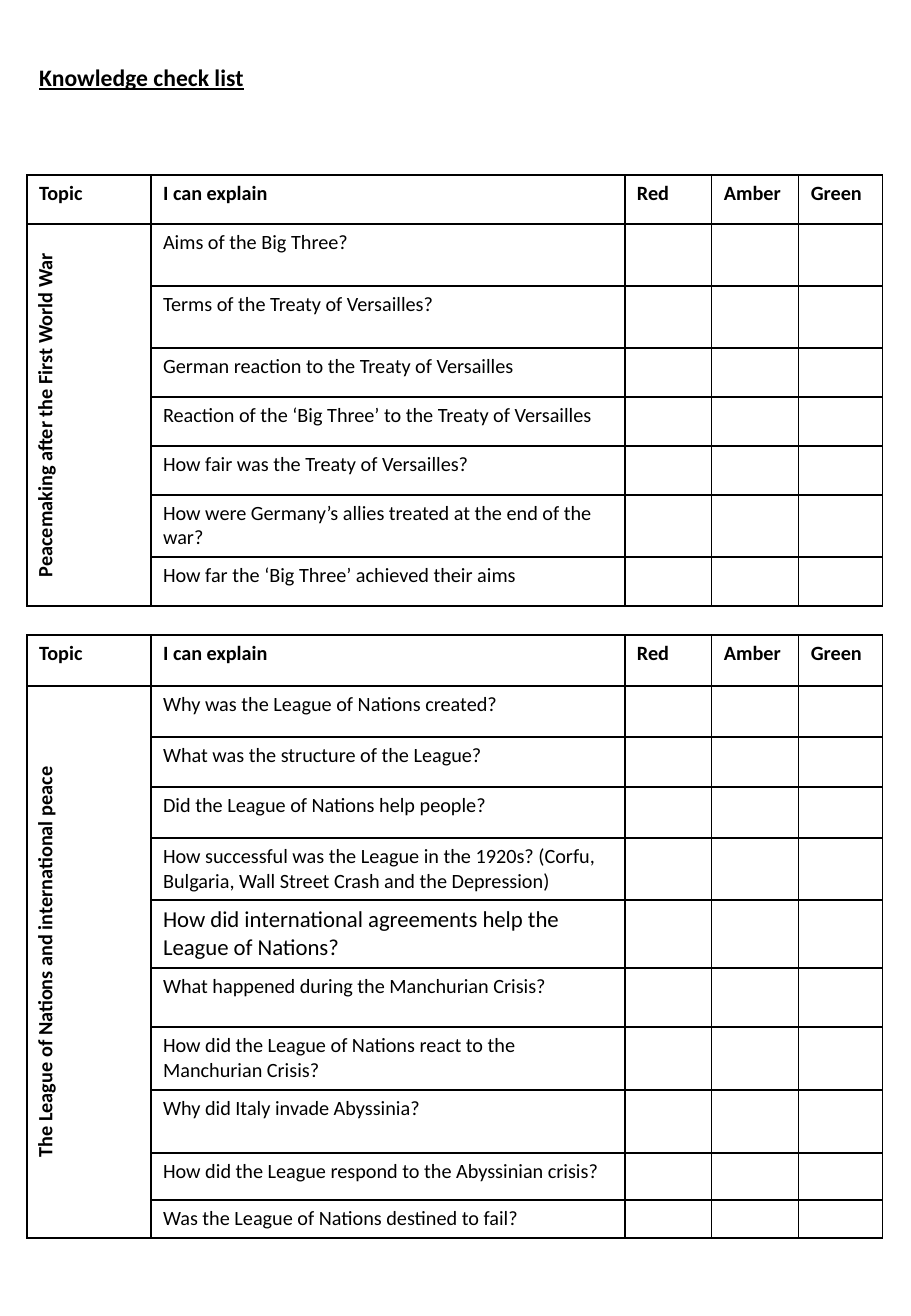
import pptx
import pptx.dml.color
import pptx.enum.text
import pptx.oxml
import pptx.oxml.ns
import pptx.util

PX = 914400 / 121.5
FONT = "Calibri"
COLORS = {"ink": "000000", "paper": "FFFFFF"}
HEADINGS = ["Topic", "I can explain", "Red", "Amber", "Green"]
COLUMNS = [124, 474, 87, 87, 84]
LARGE = {"How did international agreements help the League of Nations?": 13.5}

PEACEMAKING = [
    ("Aims of the Big Three?", 62),
    ("Terms of the Treaty of Versailles?", 62),
    ("German reaction to the Treaty of Versailles", 49),
    ("Reaction of the ‘Big Three’ to the Treaty of Versailles", 49),
    ("How fair was the Treaty of Versailles?", 49),
    ("How were Germany’s allies treated at the end of the war?", 62),
    ("How far the ‘Big Three’ achieved their aims", 49),
]
LEAGUE = [
    ("Why was the League of Nations created?", 51),
    ("What was the structure of the League?", 50),
    ("Did the League of Nations help people?", 51),
    ("How successful was the League in the 1920s? (Corfu, Bulgaria, "
     "Wall Street Crash and the Depression)", 62),
    ("How did international agreements help the League of Nations?", 68),
    ("What happened during the Manchurian Crisis?", 59),
    ("How did the League of Nations react to the Manchurian Crisis?", 63),
    ("Why did Italy invade Abyssinia?", 63),
    ("How did the League respond to the Abyssinian crisis?", 47),
    ("Was the League of Nations destined to fail?", 38),
]


def px(n):
    return pptx.util.Emu(round(n * PX))


def color(name):
    return pptx.dml.color.RGBColor.from_string(COLORS[name])


def write(tf, text, size=12, bold=False, underline=False, align=pptx.enum.text.PP_ALIGN.LEFT):
    p = tf.paragraphs[0]
    p.alignment = align
    if not text:
        p._p.get_or_add_endParaRPr().set("sz", str(size * 100))
        return
    r = p.add_run()
    r.text = text
    r.font.name = FONT
    r.font.size = pptx.util.Pt(size)
    r.font.bold = bold
    r.font.underline = underline
    r.font.color.rgb = color("ink")


def style_cell(cell):
    tcPr = cell._tc.get_or_add_tcPr()
    for side in ("lnL", "lnR", "lnT", "lnB"):
        tcPr.append(pptx.oxml.parse_xml(
            f'<a:{side} {pptx.oxml.ns.nsdecls("a")} w="12700"><a:solidFill>'
            f'<a:srgbClr val="{COLORS["ink"]}"/></a:solidFill></a:{side}>'))
    cell.fill.solid()
    cell.fill.fore_color.rgb = color("paper")


def add_title(s, text, left, top, width, height):
    sp = s.shapes.title
    sp.left, sp.top, sp.width, sp.height = map(px, (left, top, width, height))
    tf = sp.text_frame
    tf.word_wrap = True
    tf.auto_size = pptx.enum.text.MSO_AUTO_SIZE.NONE
    tf.vertical_anchor = pptx.enum.text.MSO_ANCHOR.TOP
    write(tf, text, size=14, bold=True, underline=True)


def add_checklist(s, topic, points, left, top, header):
    heights = [header] + [height for _, height in points]
    box = map(px, (left, top, sum(COLUMNS), sum(heights)))
    table = s.shapes.add_table(len(heights), len(COLUMNS), *box).table
    for column, width in zip(table.columns, COLUMNS):
        column.width = px(width)
    for row, height in zip(table.rows, heights):
        row.height = px(height)
    for cell in table.iter_cells():
        style_cell(cell)
    for i, heading in enumerate(HEADINGS):
        write(table.cell(0, i).text_frame, heading, bold=True)
    for i, (point, _) in enumerate(points, 1):
        for j, text in enumerate(["", point, "", "", ""]):
            if j:
                write(table.cell(i, j).text_frame, text, size=LARGE.get(text, 12))
    cell = table.cell(1, 0)
    cell.merge(table.cell(len(points), 0))
    cell.vertical_anchor = pptx.enum.text.MSO_ANCHOR.MIDDLE
    cell._tc.get_or_add_tcPr().set("vert", "vert270")
    write(cell.text_frame, topic, bold=True, align=pptx.enum.text.PP_ALIGN.CENTER)


def main():
    prs = pptx.Presentation()
    prs.slide_width = pptx.util.Inches(7.5)
    prs.slide_height = pptx.util.Inches(10.83)
    s = prs.slides.add_slide(prs.slide_layouts[5])
    s.background.fill.solid()
    s.background.fill.fore_color.rgb = color("paper")
    add_title(s, "Knowledge check list", 27, 57, 605, 41)
    add_checklist(s, "Peacemaking after the First World War", PEACEMAKING, 27, 175, 49)
    add_checklist(s, "The League of Nations and international peace", LEAGUE, 27, 635, 51)
    prs.save("out.pptx")


if __name__ == "__main__":
    main()
